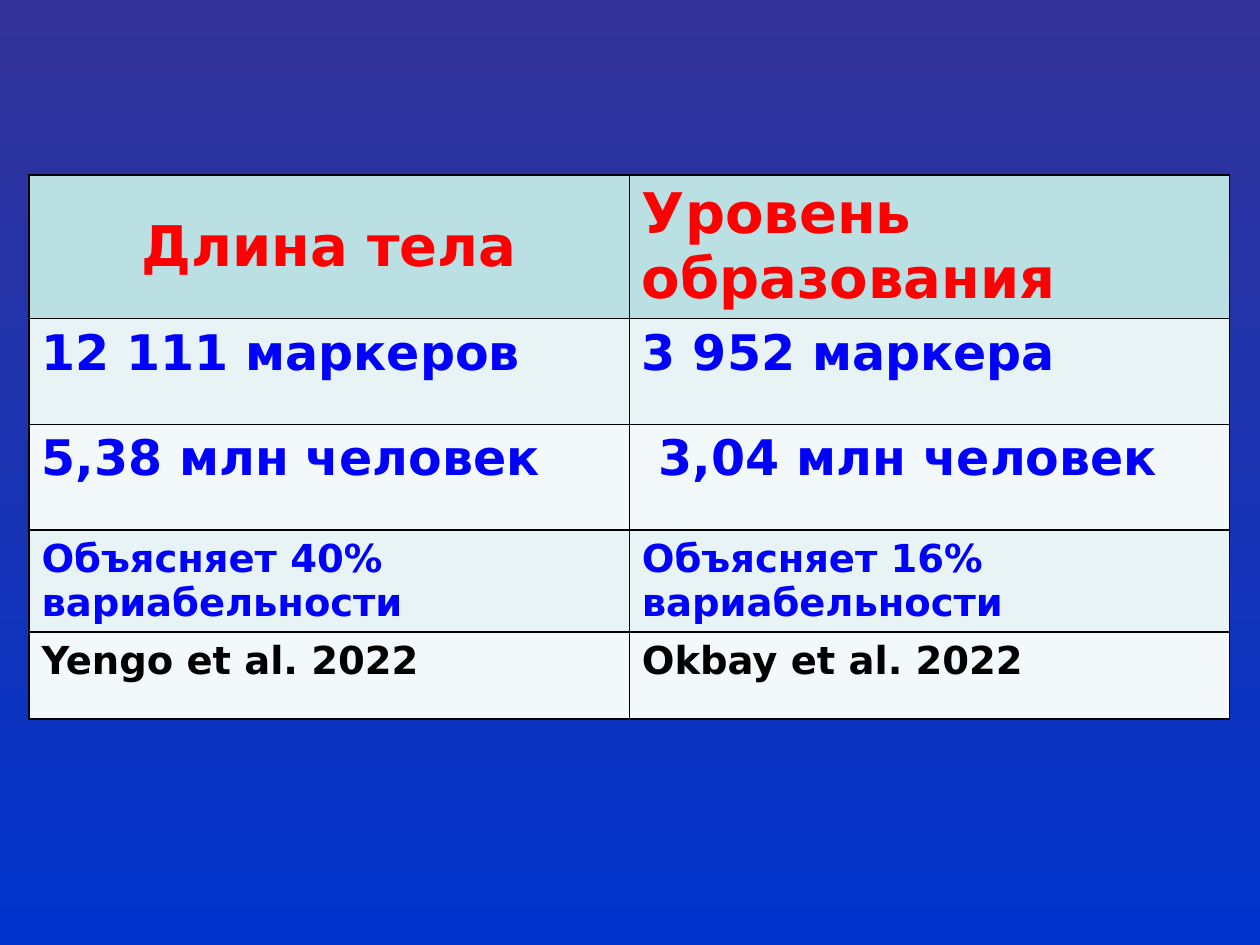
from lxml import etree
from pptx import Presentation
from pptx.dml.color import RGBColor
from pptx.enum.text import MSO_ANCHOR, PP_ALIGN
from pptx.oxml.ns import qn
from pptx.util import Inches, Pt

MIDDLE, TOP = MSO_ANCHOR.MIDDLE, MSO_ANCHOR.TOP
CENTER, LEFT = PP_ALIGN.CENTER, PP_ALIGN.LEFT

INDIGO = RGBColor(0x33, 0x33, 0x99)
COBALT = RGBColor(0x00, 0x33, 0xCC)
TEAL = RGBColor(0xBB, 0xE0, 0xE3)
MIST = RGBColor(0xE7, 0xF3, 0xF4)
PALE = RGBColor(0xF3, 0xF9, 0xFA)
RED = RGBColor(0xFF, 0x00, 0x00)
BLUE = RGBColor(0x00, 0x00, 0xFF)
BLACK = RGBColor(0x00, 0x00, 0x00)

WIDTH, HEIGHT = Inches(10), Inches(7.5)

# Each row: texts, height in inches, text size, text colour, fill
ROWS = [
    (("Длина тела", "Уровень образования"), 0.94, 32, RED, TEAL),
    (("12 111 маркеров", "3 952 маркера"), 0.84, 28, BLUE, MIST),
    (("5,38 млн человек", " 3,04 млн человек"), 0.84, 28, BLUE, PALE),
    (("Объясняет 40% вариабельности", "Объясняет 16% вариабельности"),
     0.69, 22, BLUE, MIST),
    (("Yengo et al. 2022", "Okbay et al. 2022"), 0.69, 22, BLACK, PALE),
]


class Deck:
    """Holds the style and the current slide."""

    font = "DejaVu Sans"
    rule = Pt(1)

    def __init__(self, prs):
        self.slide = prs.slides.add_slide(prs.slide_layouts[6])

    def shade(self, top, bottom):
        """Fill the background with a vertical gradient."""
        fill = self.slide.background.fill
        fill.gradient()
        fill.gradient_angle = 270
        for stop, color in zip(fill.gradient_stops, (top, bottom)):
            stop.color.rgb = color

    def border(self, cell):
        props = cell._tc.get_or_add_tcPr()
        for side in ("lnL", "lnR", "lnT", "lnB"):
            line = etree.SubElement(props, qn(f"a:{side}"), w=str(self.rule))
            solid = etree.SubElement(line, qn("a:solidFill"))
            etree.SubElement(solid, qn("a:srgbClr"), val=str(BLACK))

    def cell(self, cell, text, size, color, fill, anchor, align):
        self.border(cell)
        cell.fill.solid()
        cell.fill.fore_color.rgb = fill
        cell.vertical_anchor = anchor
        para = cell.text_frame.paragraphs[0]
        para.alignment = align
        run = para.add_run()
        run.text = text
        font = run.font
        font.name, font.size, font.bold = self.font, Pt(size), True
        font.color.rgb = color

    def table(self, rows, left, top, width):
        """Draw rows at a place given as shares of the slide's size."""
        tall = Inches(sum(row[1] for row in rows))
        table = self.slide.shapes.add_table(
            len(rows), len(rows[0][0]), int(left * WIDTH), int(top * HEIGHT),
            int(width * WIDTH), tall).table
        for r, (texts, height, size, color, fill) in enumerate(rows):
            table.rows[r].height = Inches(height)
            for c, text in enumerate(texts):
                anchor = MIDDLE if r == 0 else TOP
                align = CENTER if r == c == 0 else LEFT
                self.cell(table.cell(r, c), text, size, color, fill,
                          anchor, align)


def main():
    prs = Presentation()
    prs.slide_width, prs.slide_height = WIDTH, HEIGHT
    deck = Deck(prs)
    deck.shade(INDIGO, COBALT)
    deck.table(ROWS, left=0.023, top=1.39 / 7.5, width=0.953)
    prs.save("out.pptx")


if __name__ == "__main__":
    main()
